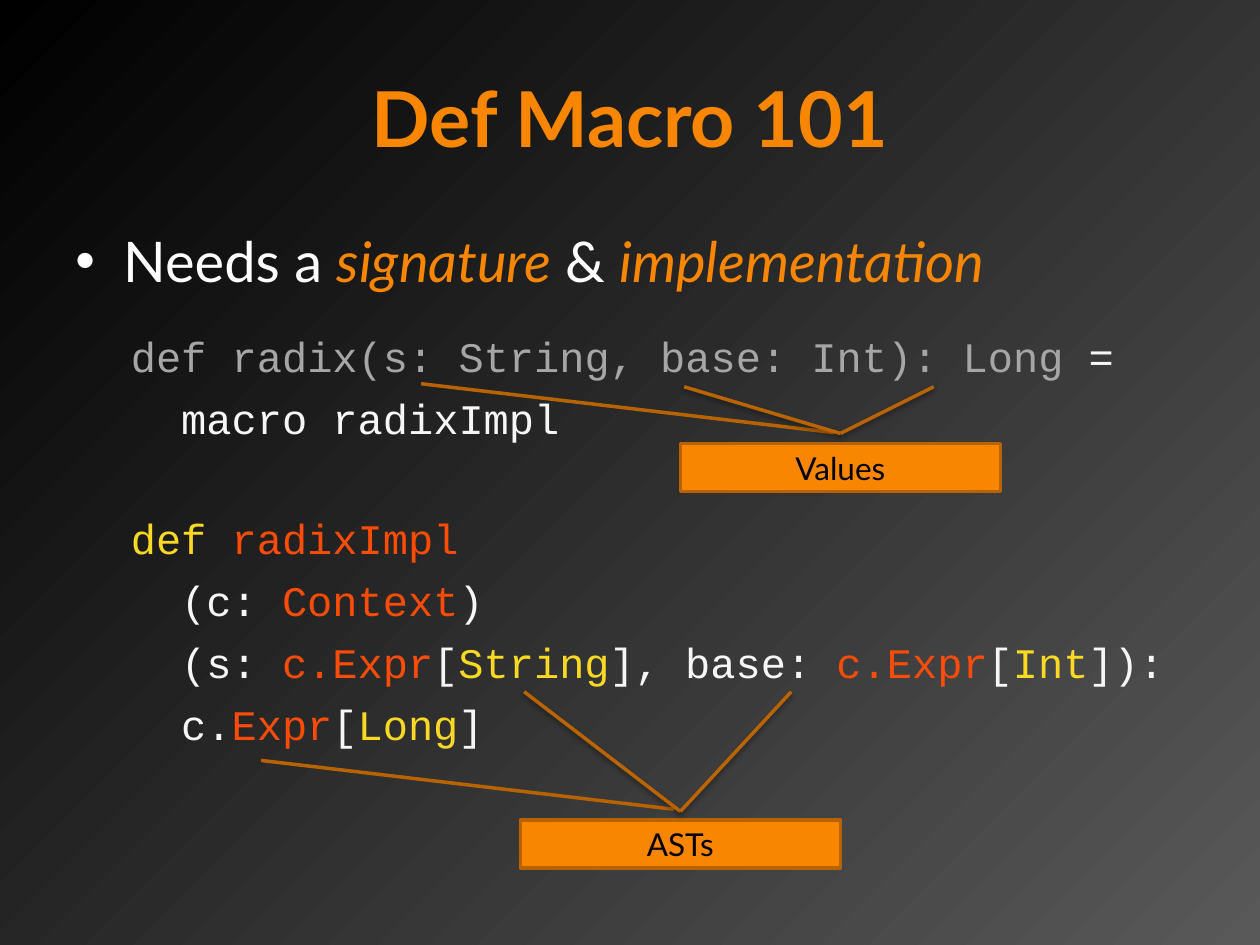
import pptx
import pptx.util
import pptx.oxml
from lxml import etree
from pptx.dml.color import RGBColor
from pptx.enum.shapes import MSO_CONNECTOR, MSO_SHAPE
from pptx.enum.text import MSO_ANCHOR, PP_ALIGN
from pptx.oxml.ns import nsdecls, qn
from pptx.util import Inches, Pt

ORANGE = RGBColor(0xF8, 0x86, 0x00)
EDGE = RGBColor(0xB7, 0x63, 0x00)
POINTER = RGBColor(0xBA, 0x64, 0x00)
WHITE = RGBColor(0xFF, 0xFF, 0xFF)
BLACK = RGBColor(0x00, 0x00, 0x00)
GREY = RGBColor(0xA6, 0xA6, 0xA6)
PALE = RGBColor(0xF6, 0xF6, 0xF6)
YELLOW = RGBColor(0xF9, 0xD9, 0x24)
RED = RGBColor(0xFC, 0x4C, 0x08)

TITLE = "Def Macro 101"
BULLET = [("Needs a ", WHITE, False), ("signature ", ORANGE, True),
          ("& ", WHITE, False), ("implementation", ORANGE, True)]
CODE = [
    [[("def radix(s: String, base: Int): Long ", GREY), ("=", PALE)],
     [("  macro radixImpl", PALE)]],
    [[("def ", YELLOW), ("radixImpl", RED)],
     [("  (c: ", PALE), ("Context", RED), (")", PALE)],
     [("  (s: ", PALE), ("c.Expr", RED), ("[", PALE), ("String", YELLOW),
      ("], base: ", PALE), ("c.Expr", RED), ("[", PALE), ("Int", YELLOW),
      ("]):", PALE)],
     [("  c.", PALE), ("Expr", RED), ("[", PALE), ("Long", YELLOW), ("]", PALE)]],
]
CALLOUTS = [
    ("Values", 5.4, 3.52, (6.67, 3.44), [(5.43, 3.07), (7.41, 3.07)]),
    ("ASTs", 4.13, 6.51, (5.4, 6.44), [(4.16, 5.49), (6.28, 5.49)]),
]
CALLOUT_SIZE = (2.54, 0.38)
CALLOUT_ADJ = (-0.23, 0.48, -1.25, -0.81)
LINE_GAP = 6.5
BLOCK_GAPS = (21, 40)

BACKGROUND = f"""<p:bg {nsdecls('p', 'a')}><p:bgPr><a:gradFill rotWithShape="1"><a:gsLst>
<a:gs pos="0"><a:srgbClr val="595959"/></a:gs><a:gs pos="100000"><a:srgbClr val="000000"/></a:gs>
</a:gsLst><a:path path="circle"><a:fillToRect l="100000" t="100000"/></a:path></a:gradFill>
<a:effectLst/></p:bgPr></p:bg>"""
SHADOW = f"""<a:effectLst {nsdecls('a')}><a:outerShdw blurRad="39370" dist="20320" dir="5400000"
rotWithShape="0"><a:srgbClr val="000000"><a:alpha val="38000"/></a:srgbClr></a:outerShdw></a:effectLst>"""


def add_run(p, text, **fmt):
    r = p.add_run()
    r.text = text
    color = fmt.pop("color")
    for name, value in fmt.items():
        setattr(r.font, name, value)
    r.font.color.rgb = color


def add_box(s, left, top, width, height):
    tf = s.shapes.add_textbox(*map(Inches, (left, top, width, height))).text_frame
    tf.word_wrap = True
    return tf


def indent(p, margin, first=0, bullet=None):
    pPr = p._p.get_or_add_pPr()
    pPr.set("marL", str(Inches(margin)))
    pPr.set("indent", str(Inches(first)))
    if bullet:
        etree.SubElement(pPr, qn("a:buFont"), typeface="Arial")
        etree.SubElement(pPr, qn("a:buChar"), char=bullet)


def add_title(s):
    tf = add_box(s, 0.5, 0.3, 9, 1.25)
    tf.vertical_anchor = MSO_ANCHOR.MIDDLE
    p = tf.paragraphs[0]
    p.alignment = PP_ALIGN.CENTER
    add_run(p, TITLE, name="Lato", size=Pt(44), bold=True, color=ORANGE)


def add_body(s):
    tf = add_box(s, 0.5, 1.75, 9, 4.95)
    p = tf.paragraphs[0]
    indent(p, 0.38, -0.38, "•")
    for text, color, italic in BULLET:
        add_run(p, text, name="Lato", size=Pt(32), italic=italic, color=color)
    for block, gap in zip(CODE, BLOCK_GAPS):
        for i, line in enumerate(block):
            p = tf.add_paragraph()
            indent(p, 0.44)
            p.space_before = Pt(LINE_GAP if i else gap)
            for text, color in line:
                add_run(p, text, name="Courier New", size=Pt(24), color=color)


def add_callout(s, label, left, top, start, ends):
    sp = s.shapes.add_shape(MSO_SHAPE.LINE_CALLOUT_1,
                            *map(Inches, (left, top, *CALLOUT_SIZE)))
    for i, value in enumerate(CALLOUT_ADJ):
        sp.adjustments[i] = value
    sp.shadow.inherit = False
    sp.fill.solid()
    sp.fill.fore_color.rgb = ORANGE
    sp.line.color.rgb = EDGE
    sp.line.width = Pt(2)
    tf = sp.text_frame
    tf.vertical_anchor = MSO_ANCHOR.MIDDLE
    p = tf.paragraphs[0]
    p.alignment = PP_ALIGN.CENTER
    add_run(p, label, name="Lato", size=Pt(18), color=BLACK)
    for end in ends:
        line = s.shapes.add_connector(MSO_CONNECTOR.STRAIGHT, *map(Inches, start + end))
        line.line.color.rgb = POINTER
        line.line.width = Pt(2)
        line._element.spPr.append(pptx.oxml.parse_xml(SHADOW))


def main():
    prs = pptx.Presentation()
    prs.slide_width, prs.slide_height = Inches(10), Inches(7.5)
    s = prs.slides.add_slide(prs.slide_layouts[6])
    s._element.cSld.insert(0, pptx.oxml.parse_xml(BACKGROUND))
    add_title(s)
    add_body(s)
    for callout in CALLOUTS:
        add_callout(s, *callout)
    prs.save("out.pptx")


if __name__ == "__main__":
    main()
